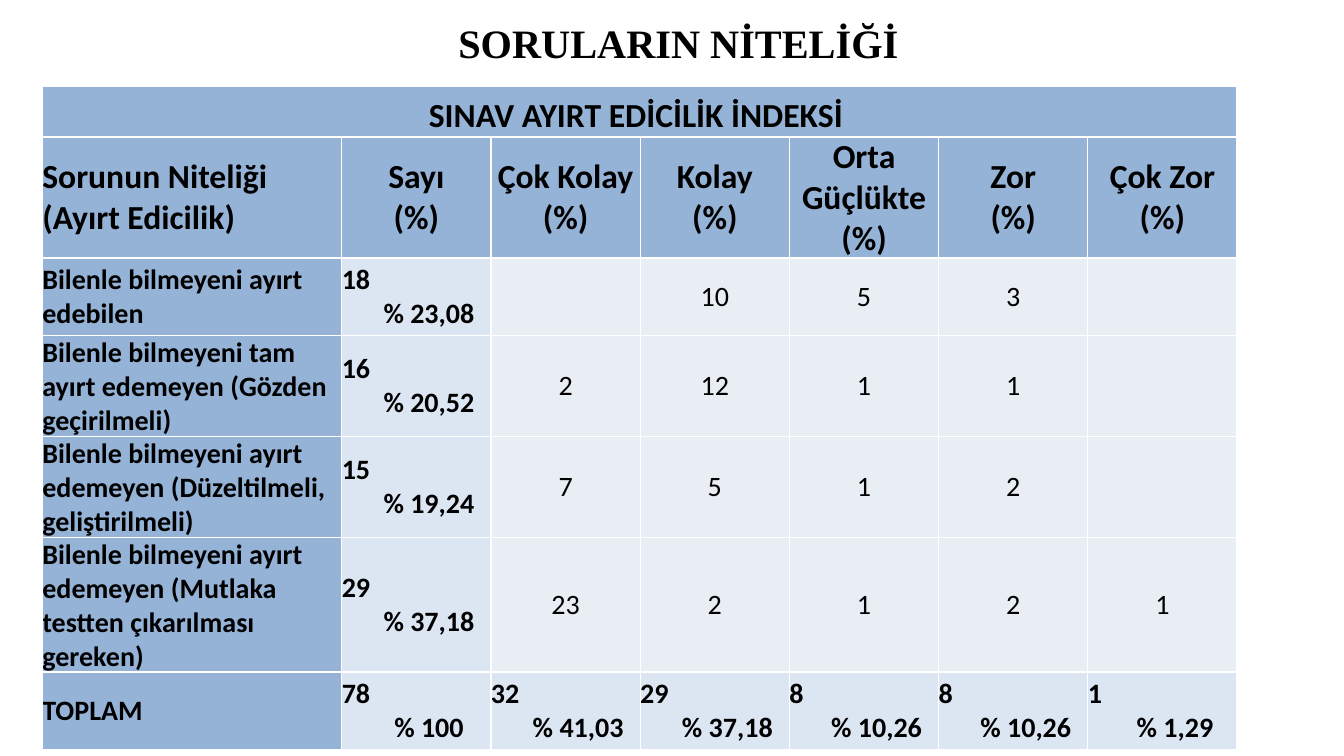
from pptx import Presentation
from pptx.dml.color import RGBColor
from pptx.enum.text import MSO_ANCHOR as ANCHOR, PP_ALIGN as ALIGN
from pptx.oxml import parse_xml
from pptx.oxml.ns import nsdecls
from pptx.util import Inches, Pt

TITLE = "SORULARIN NİTELİĞİ"
BANNER = "SINAV AYIRT EDİCİLİK İNDEKSİ "
HEADERS = ["Sorunun Niteliği\n(Ayırt Edicilik)", "Sayı\n(%)", "Çok Kolay\n(%)", "Kolay\n(%)",
           "Orta Güçlükte\n(%)", "Zor\n(%)", "Çok Zor\n(%)"]
QUALITIES = [
    ("Bilenle bilmeyeni ayırt\nedebilen", "18\n% 23,08", "", "10", "5", "3", ""),
    ("Bilenle bilmeyeni tam ayırt edemeyen (Gözden geçirilmeli)",
     "16\n% 20,52", "2", "12", "1", "1", ""),
    ("Bilenle bilmeyeni ayırt edemeyen (Düzeltilmeli, geliştirilmeli)",
     "15\n% 19,24", "7", "5", "1", "2", ""),
    ("Bilenle bilmeyeni ayırt edemeyen (Mutlaka testten çıkarılması gereken)",
     "29\n% 37,18", "23", "2", "1", "2", "1"),
]
TOTALS = ("TOPLAM", "78\n% 100", "32\n% 41,03", "29\n% 37,18", "8\n% 10,26", "8\n% 10,26", "1\n% 1,29")
ROWS = [[BANNER] + [""] * 6, HEADERS, *QUALITIES, TOTALS]
COL_WIDTHS = [2.97] + [1.48] * 6
ROW_HEIGHTS = [0.5, 1.08, 0.77, 0.9, 0.9, 1.2, 0.77]
COLORS = {"header": "95B3D7", "sum": "DCE6F2", "value": "E9EDF4", "border": "FFFFFF", "text": "000000"}
PERCENT_INDENT = Inches(0.25)


def write(tf, text, size=20, font="Calibri", bold=True, align=ALIGN.CENTER, counted=False):
    """Fill a text frame, one paragraph per line; counted puts a count left of its percentage."""
    for i, line in enumerate(text.split("\n")):
        p = tf.paragraphs[0] if i == 0 else tf.add_paragraph()
        p.alignment = ALIGN.LEFT if counted and i == 0 else align
        if counted and i:
            p._p.get_or_add_pPr().set("marL", str(PERCENT_INDENT))
        r = p.add_run()
        r.text = line
        r.font.size, r.font.name, r.font.bold = Pt(size), font, bold
        r.font.color.rgb = RGBColor.from_string(COLORS["text"])


def style_cell(cell, fill):
    """Give a cell its fill, white borders and zero margins."""
    cell.margin_left = cell.margin_right = cell.margin_top = cell.margin_bottom = 0
    cell.fill.solid()
    cell.fill.fore_color.rgb = RGBColor.from_string(COLORS[fill])
    tcPr = cell._tc.get_or_add_tcPr()
    for i, side in enumerate("LRTB"):
        tcPr.insert(i, parse_xml(
            f'<a:ln{side} {nsdecls("a")} w="{Pt(1)}"><a:solidFill>'
            f'<a:srgbClr val="{COLORS["border"]}"/></a:solidFill></a:ln{side}>'))


def add_index_table(s):
    """Add the discrimination index table."""
    table = s.shapes.add_table(len(ROWS), len(COL_WIDTHS), Inches(0.42), Inches(0.86),
                               Inches(sum(COL_WIDTHS)), Inches(sum(ROW_HEIGHTS))).table
    for column, width in zip(table.columns, COL_WIDTHS):
        column.width = Inches(width)
    for row, height in zip(table.rows, ROW_HEIGHTS):
        row.height = Inches(height)
    table.cell(0, 0).merge(table.cell(0, len(COL_WIDTHS) - 1))
    for i, texts in enumerate(ROWS):
        for j, text in enumerate(texts):
            cell = table.cell(i, j)
            heading = i < 2
            summed = j == 1 or i == len(ROWS) - 1
            fill = "header" if heading or j == 0 else "sum" if summed else "value"
            style_cell(cell, fill)
            cell.vertical_anchor = ANCHOR.BOTTOM if i == 0 else ANCHOR.MIDDLE
            if text:
                write(cell.text_frame, text, size=24 if heading else 20, bold=fill != "value",
                      align=ALIGN.LEFT if j == 0 and i else ALIGN.CENTER, counted=fill == "sum")


def main():
    """Build and save the slide."""
    prs = Presentation()
    prs.slide_width, prs.slide_height = Inches(13.33), Inches(7.5)
    s = prs.slides.add_slide(prs.slide_layouts[6])
    tf = s.shapes.add_textbox(Inches(0.73), Inches(0.24), Inches(12), Inches(0.36)).text_frame
    tf.word_wrap = True
    tf.vertical_anchor = ANCHOR.MIDDLE
    write(tf, TITLE, size=28.8, font="Times New Roman")
    add_index_table(s)
    prs.save("out.pptx")


if __name__ == "__main__":
    main()
